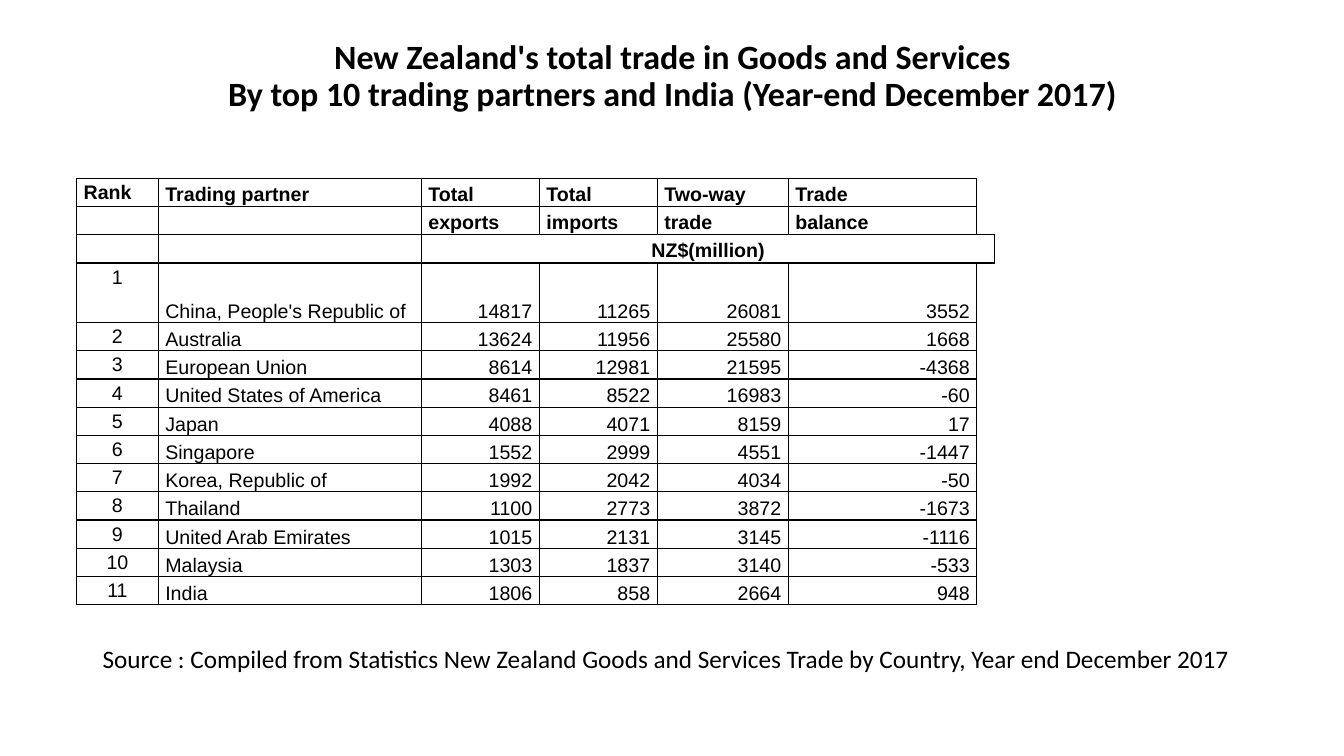
from lxml import etree
from pptx import Presentation
from pptx.dml.color import RGBColor
from pptx.enum.text import MSO_ANCHOR, PP_ALIGN
from pptx.oxml.ns import qn
from pptx.util import Inches, Pt

BLACK = "000000"
COLUMNS = [0.81, 2.61, 1.17, 1.17, 1.3, 1.87, 0.14]
ROW_HEIGHT, CHINA_HEIGHT = 0.28, 0.59
HEADERS = [
    ["Rank", "Trading partner", "Total", "Total", "Two-way", "Trade"],
    ["", "", "exports", "imports", "trade", "balance"],
    ["", "", "NZ$(million)"],
]
UNIT_ROW = len(HEADERS) - 1
# Partner, exports, imports, two-way trade, balance
PARTNERS = [
    ("China, People's Republic of", 14817, 11265, 26081, 3552),
    ("Australia", 13624, 11956, 25580, 1668),
    ("European Union", 8614, 12981, 21595, -4368),
    ("United States of America", 8461, 8522, 16983, -60),
    ("Japan", 4088, 4071, 8159, 17),
    ("Singapore", 1552, 2999, 4551, -1447),
    ("Korea, Republic of", 1992, 2042, 4034, -50),
    ("Thailand", 1100, 2773, 3872, -1673),
    ("United Arab Emirates", 1015, 2131, 3145, -1116),
    ("Malaysia", 1303, 1837, 3140, -533),
    ("India", 1806, 858, 2664, 948),
]


def color(value):
    return RGBColor.from_string(value)


def set_all(obj, values):
    for name, value in values.items():
        setattr(obj, name, value)


class SlideBuilder:
    heading_font = "Calibri"
    table_font = "Arial"
    table_size = 14

    def __init__(self, prs):
        self.s = prs.slides.add_slide(prs.slide_layouts[6])

    def paragraph(self, p, text, font, size, bold=False, **layout):
        p.text = text
        set_all(p, layout)
        for r in p.runs:
            set_all(r.font, {"name": font, "size": Pt(size), "bold": bold})
            r.font.color.rgb = color(BLACK)

    def text(self, box, text, size, frame, **style):
        sp = self.s.shapes.add_textbox(*map(Inches, box))
        tf = sp.text_frame
        set_all(tf, {"word_wrap": True, **frame})
        self.paragraph(tf.paragraphs[0], text, self.heading_font, size, **style)

    def table(self, box, widths, heights):
        frame = self.s.shapes.add_table(len(heights), len(widths), *map(Inches, box))
        table = frame.table
        set_all(table, {"first_row": False, "horz_banding": False})
        for column, width in zip(table.columns, widths):
            column.width = Inches(width)
        for row, height in zip(table.rows, heights):
            row.height = Inches(height)
        return table

    def borders(self, cell, sides):
        tcPr = cell._tc.get_or_add_tcPr()
        for side in "LRTB":
            ln = etree.SubElement(tcPr, qn(f"a:ln{side}"), w=str(Pt(1)))
            if side in sides:
                fill = etree.SubElement(ln, qn("a:solidFill"))
                etree.SubElement(fill, qn("a:srgbClr"), val=BLACK)
            else:
                etree.SubElement(ln, qn("a:noFill"))

    def cell(self, cell, text, sides, anchor, **style):
        set_all(cell, {"margin_left": Inches(0.07), "margin_right": Inches(0.07),
                       "margin_top": 0, "margin_bottom": 0,
                       "vertical_anchor": anchor})
        self.borders(cell, sides)
        cell.fill.background()
        p = cell.text_frame.paragraphs[0]
        if text:
            self.paragraph(p, text, self.table_font, self.table_size,
                           line_spacing=1.15, **style)
        else:
            # Keep empty cells from stretching their row
            etree.SubElement(p._p, qn("a:endParaRPr"), sz=str(self.table_size * 100))


def cell_style(row, col):
    if row < len(HEADERS):
        align = PP_ALIGN.CENTER if row == UNIT_ROW else PP_ALIGN.LEFT
        anchor = MSO_ANCHOR.TOP if col == 0 else MSO_ANCHOR.MIDDLE
        return {"anchor": anchor, "alignment": align, "bold": True}
    align = {0: PP_ALIGN.CENTER, 1: PP_ALIGN.LEFT}.get(col, PP_ALIGN.RIGHT)
    anchor = MSO_ANCHOR.TOP if col == 0 else MSO_ANCHOR.BOTTOM
    return {"anchor": anchor, "alignment": align, "space_after": Pt(10)}


def cell_sides(row, col):
    if col < len(COLUMNS) - 1 or row == UNIT_ROW:
        return "LRTB"
    # The narrow last column is open except around the unit row
    return {UNIT_ROW - 1: "LB", UNIT_ROW + 1: "LT"}.get(row, "L")


def main():
    prs = Presentation()
    prs.slide_width, prs.slide_height = Inches(13.33), Inches(7.5)
    slide = SlideBuilder(prs)

    # Title
    slide.text((0.92, 0.4, 11.5, 1.37),
               "New Zealand's total trade in Goods and Services\v"
               "By top 10 trading partners and India (Year-end December 2017)",
               24.3, {"margin_top": 0}, bold=True,
               alignment=PP_ALIGN.CENTER, line_spacing=0.9)

    # Trade table
    rows = HEADERS + [[str(v) for v in (rank, *partner)]
                      for rank, partner in enumerate(PARTNERS, 1)]
    heights = [ROW_HEIGHT] * len(rows)
    heights[len(HEADERS)] = CHINA_HEIGHT
    table = slide.table((0.76, 1.77, sum(COLUMNS), sum(heights)), COLUMNS, heights)
    for i, values in enumerate(rows):
        for j in range(len(COLUMNS)):
            text = values[j] if j < len(values) else ""
            slide.cell(table.cell(i, j), text, cell_sides(i, j), **cell_style(i, j))
    table.cell(UNIT_ROW, 2).merge(table.cell(UNIT_ROW, len(COLUMNS) - 1))

    # Source line
    slide.text((0.92, 6.33, 11.5, 0.4),
               "Source : Compiled from Statistics New Zealand Goods and Services "
               "Trade by Country, Year end December 2017", 18, {})

    prs.save("out.pptx")


if __name__ == "__main__":
    main()
